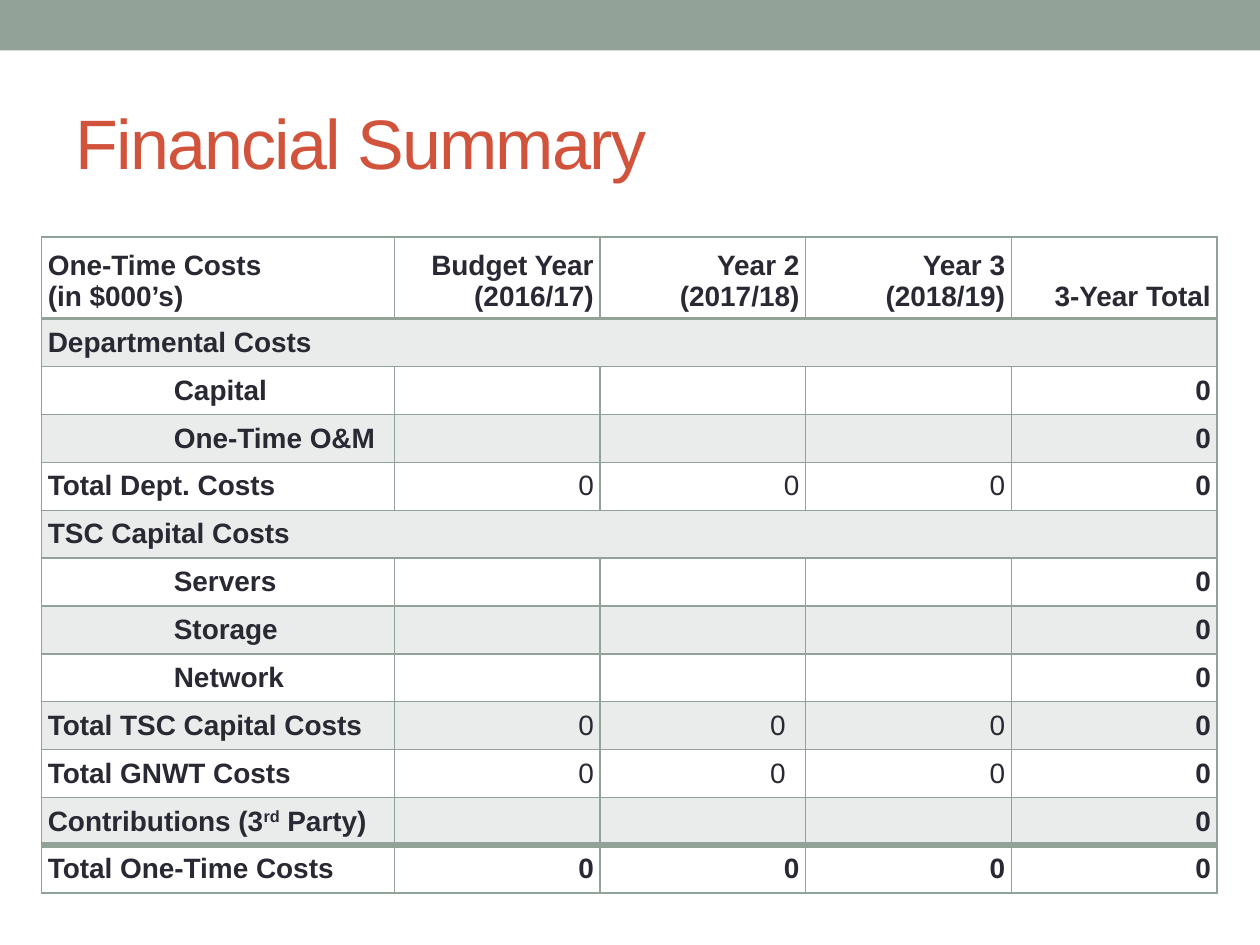
from lxml import etree
from pptx import Presentation
from pptx.dml.color import RGBColor
from pptx.enum import shapes, text
from pptx.oxml.ns import qn
from pptx.util import Inches, Pt

SAGE, RUST, INK = "93A299", "D2533C", "292934"
FONT = "Arial"
LEFT, TOP, WIDTH = 0.33, 1.88, 9.33
LABEL_WIDTH, HEADER_HEIGHT, ROW_HEIGHT = 2.8, 0.65, 0.38
INSET = 0.05

# A label starting with ">" is an indented item; text between "^" is superscript.
ROWS = [
    ["One-Time Costs\n(in $000’s)", "Budget Year\n(2016/17)",
     "Year 2\n(2017/18)", "Year 3\n(2018/19)", "3-Year Total"],
    ["Departmental Costs"],
    [">Capital", "", "", "", "0"],
    [">One-Time O&M", "", "", "", "0"],
    ["Total Dept. Costs", "0", "0", "0", "0"],
    ["TSC Capital Costs"],
    [">Servers", "", "", "", "0"],
    [">Storage", "", "", "", "0"],
    [">Network", "", "", "", "0"],
    ["Total TSC Capital Costs", "0", "0", "0", "0"],
    ["Total GNWT Costs", "0", "0", "0", "0"],
    ["Contributions (3^rd^ Party)", "", "", "", "0"],
    ["Total One-Time Costs", "0", "0", "0", "0"],
]
LAST_ROW = len(ROWS) - 1
LAST_COLUMN = len(ROWS[0]) - 1
RULES = {1: 2, LAST_ROW: 4}  # heavier line above these rows, in points
INSET_ZERO_ROWS = (9, 10)    # Year 2 figure stands further from the edge


def color(hex_string):
    return RGBColor.from_string(hex_string)


def write(frame, content, size=16, ink=INK, bold=False, align="LEFT",
          indent=0, spacing=0):
    """Fill the first paragraph; "\\n" breaks the line, "^" marks superscript."""
    paragraph = frame.paragraphs[0]
    paragraph.alignment = getattr(text.PP_ALIGN, align)
    if indent:
        properties = paragraph._p.get_or_add_pPr()
        properties.set("marL", str(Inches(indent)))
        properties.set("indent", "0")
    if not content:
        etree.SubElement(paragraph._p, qn("a:endParaRPr"), sz=str(size * 100))
    for number, line in enumerate(content.split("\n")):
        if number:
            paragraph.add_line_break()
        for part, words in enumerate(line.split("^")):
            if not words:
                continue
            run = paragraph.add_run()
            run.text = words
            run.font.name = FONT
            run.font.size = Pt(size)
            run.font.bold = bold
            run.font.color.rgb = color(ink)
            if part % 2:
                run.font._element.set("baseline", "30000")
            if spacing:
                run.font._element.set("spc", str(spacing * 100))


def add_band(slide):
    band = slide.shapes.add_shape(shapes.MSO_SHAPE.RECTANGLE, 0, 0,
                                  Inches(10), Inches(0.4))
    band.shadow.inherit = False
    band.fill.solid()
    band.fill.fore_color.rgb = color(SAGE)
    band.line.fill.background()


def add_title(slide, content):
    frame = slide.shapes.add_textbox(Inches(0.5), Inches(0.58),
                                     Inches(9), Inches(1.08)).text_frame
    frame.word_wrap = True
    frame.vertical_anchor = text.MSO_ANCHOR.MIDDLE
    write(frame, content, size=40, ink=RUST, spacing=-1)


def draw_borders(cell, top, bottom):
    properties = cell._tc.get_or_add_tcPr()
    for side, points in (("L", 1), ("R", 1), ("T", top), ("B", bottom)):
        line = etree.SubElement(properties, qn(f"a:ln{side}"), w=str(Pt(points)))
        fill = etree.SubElement(line, qn("a:solidFill"))
        etree.SubElement(fill, qn("a:srgbClr"), val=SAGE)


def shade(cell, shaded):
    if not shaded:
        cell.fill.background()
        return
    cell.fill.solid()
    cell.fill.fore_color.rgb = color(SAGE)
    tint = cell._tc.tcPr.find(qn("a:solidFill")).find(qn("a:srgbClr"))
    etree.SubElement(tint, qn("a:alpha"), val="20000")


def format_cell(cell, row, column):
    cell.margin_left = cell.margin_right = Inches(INSET)
    cell.margin_top = cell.margin_bottom = Inches(INSET)
    if column == 2 and row in INSET_ZERO_ROWS:
        cell.margin_right = Inches(0.16)
    anchor = text.MSO_ANCHOR.MIDDLE if row else text.MSO_ANCHOR.BOTTOM
    cell.vertical_anchor = anchor
    draw_borders(cell, RULES.get(row, 1), RULES.get(row + 1, 1))
    shade(cell, row % 2 == 1)


def add_cost_table(slide):
    height = HEADER_HEIGHT + LAST_ROW * ROW_HEIGHT
    table = slide.shapes.add_table(len(ROWS), LAST_COLUMN + 1, Inches(LEFT),
                                   Inches(TOP), Inches(WIDTH),
                                   Inches(height)).table
    table.first_row = table.horz_banding = False
    for column, track in enumerate(table.columns):
        year_width = (WIDTH - LABEL_WIDTH) / LAST_COLUMN
        track.width = Inches(year_width if column else LABEL_WIDTH)
    for row, values in enumerate(ROWS):
        table.rows[row].height = Inches(ROW_HEIGHT if row else HEADER_HEIGHT)
        if len(values) == 1:
            table.cell(row, 0).merge(table.cell(row, LAST_COLUMN))
        for column in range(LAST_COLUMN + 1):
            cell = table.cell(row, column)
            format_cell(cell, row, column)
            value = values[column] if column < len(values) else ""
            write(cell.text_frame, value.lstrip(">"),
                  bold=row in (0, LAST_ROW) or column in (0, LAST_COLUMN),
                  align="RIGHT" if column else "LEFT",
                  indent=1 if value.startswith(">") else 0)


def main():
    deck = Presentation()
    deck.slide_width, deck.slide_height = Inches(10), Inches(7.5)
    slide = deck.slides.add_slide(deck.slide_layouts[6])
    add_band(slide)
    add_title(slide, "Financial Summary")
    add_cost_table(slide)
    deck.save("out.pptx")


if __name__ == "__main__":
    main()
